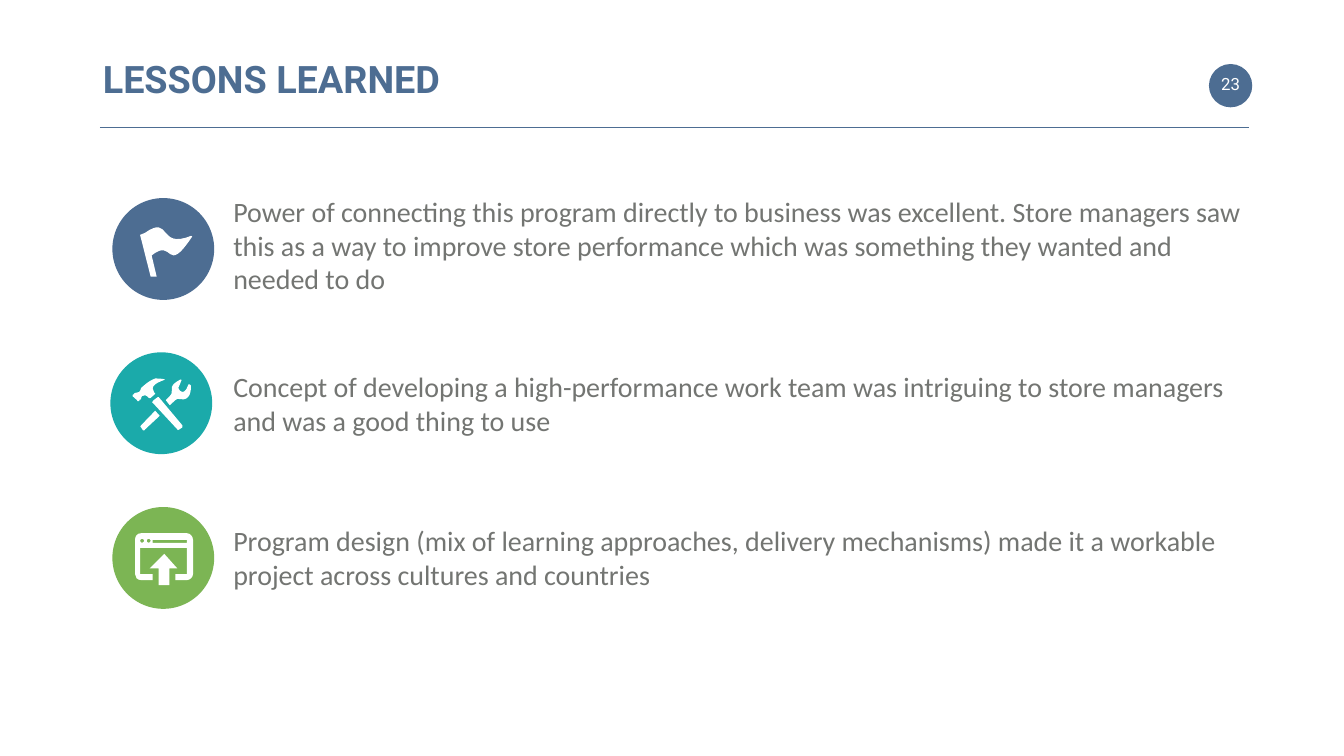
from lxml import etree
from pptx import Presentation
from pptx.dml.color import RGBColor
from pptx.enum.shapes import MSO_CONNECTOR, MSO_SHAPE
from pptx.enum.text import MSO_ANCHOR, MSO_AUTO_SIZE, PP_ALIGN
from pptx.oxml.ns import qn
from pptx.util import Inches, Pt

OVAL, LINE = MSO_SHAPE.OVAL, MSO_CONNECTOR.STRAIGHT
TOP, MIDDLE = MSO_ANCHOR.TOP, MSO_ANCHOR.MIDDLE
LEFT, CENTER = PP_ALIGN.LEFT, PP_ALIGN.CENTER
FIXED = MSO_AUTO_SIZE.NONE

COLORS = {"blue": "4D6D92", "teal": "1BAAAA", "green": "7CB554",
          "gray": "737572", "white": "FFFFFF"}
DISC = 2.02


def color(name):
    return RGBColor.from_string(COLORS[name])


def dot(x, y, r=0.04):
    h = r / 2
    return [(x, y + r), (x - h, y + r, x - r, y + h, x - r, y),
            (x - r, y - h, x - h, y - r, x, y - r),
            (x + h, y - r, x + r, y - h, x + r, y),
            (x + r, y + h, x + h, y + r, x, y + r)]


# Icon outlines, in inches from the corner of the disc.
# Two numbers are a corner; six are a Bezier curve from the last point.
FLAG = [
    [(1.56, 0.75), (0.9, 1.02, 1.17, 0.32, 0.65, 0.69), (0.55, 0.73),
     (0.76, 1.56), (0.88, 1.56), (0.78, 1.14),
     (1.23, 0.77, 1.05, 1.56, 1.58, 0.77),
     (1.6, 0.77, 1.58, 0.75, 1.56, 0.75)],
]
TOOLS = [
    # Hammer head
    [(0.63, 0.87), (0.67, 0.83, 0.71, 0.85, 0.77, 0.91), (0.79, 0.91),
     (0.81, 0.91, 0.87, 0.83, 0.89, 0.83), (0.89, 0.81),
     (0.87, 0.81, 0.86, 0.79, 0.86, 0.77),
     (0.75, 0.62, 1.14, 0.54, 1.08, 0.54),
     (1.04, 0.52, 0.92, 0.52, 0.89, 0.52),
     (0.83, 0.54, 0.73, 0.6, 0.69, 0.64),
     (0.63, 0.69, 0.61, 0.71, 0.61, 0.71),
     (0.59, 0.73, 0.61, 0.77, 0.57, 0.79),
     (0.53, 0.81, 0.51, 0.79, 0.48, 0.81),
     (0.48, 0.83, 0.46, 0.83, 0.44, 0.85), (0.44, 0.87), (0.53, 0.95),
     (0.53, 0.97, 0.54, 0.97, 0.57, 0.97),
     (0.57, 0.95, 0.59, 0.93, 0.61, 0.93),
     (0.61, 0.93, 0.61, 0.87, 0.63, 0.87)],
    # Hammer handle
    [(0.96, 0.89), (0.94, 0.89), (0.86, 0.95),
     (0.83, 0.97, 0.83, 0.97, 0.83, 0.99), (1.33, 1.53),
     (1.33, 1.55, 1.35, 1.55, 1.37, 1.53), (1.43, 1.49), (1.43, 1.45)],
    # Wrench head
    [(1.6, 0.66), (1.57, 0.62, 1.57, 0.64, 1.55, 0.64),
     (1.55, 0.66, 1.51, 0.71, 1.51, 0.73),
     (1.49, 0.77, 1.45, 0.81, 1.39, 0.77),
     (1.33, 0.71, 1.35, 0.69, 1.37, 0.66),
     (1.37, 0.64, 1.41, 0.58, 1.41, 0.56),
     (1.43, 0.56, 1.41, 0.54, 1.39, 0.54),
     (1.37, 0.56, 1.25, 0.6, 1.22, 0.69),
     (1.2, 0.75, 1.25, 0.81, 1.18, 0.87), (1.1, 0.95), (1.18, 1.05),
     (1.29, 0.95), (1.31, 0.93, 1.35, 0.91, 1.39, 0.93),
     (1.49, 0.95, 1.53, 0.91, 1.57, 0.85),
     (1.6, 0.79, 1.6, 0.69, 1.6, 0.66)],
    # Wrench handle
    [(0.61, 1.45), (0.59, 1.47, 0.59, 1.49, 0.61, 1.49), (0.65, 1.55),
     (0.67, 1.55, 0.69, 1.55, 0.69, 1.53), (0.98, 1.26), (0.89, 1.16)],
]
WINDOW = [
    # Frame
    [(1.48, 0.52), (0.57, 0.52), (0.49, 0.52, 0.45, 0.58, 0.45, 0.65),
     (0.45, 1.33), (0.45, 1.39, 0.49, 1.45, 0.57, 1.45), (0.8, 1.45),
     (0.8, 1.33), (0.55, 1.33), (0.55, 0.81), (1.48, 0.81), (1.48, 1.33),
     (1.25, 1.33), (1.25, 1.45), (1.48, 1.45),
     (1.54, 1.45, 1.6, 1.39, 1.6, 1.33), (1.6, 0.65),
     (1.6, 0.58, 1.54, 0.52, 1.48, 0.52)],
    # Buttons and address bar
    dot(0.59, 0.67),
    dot(0.72, 0.67),
    [(0.8, 0.71), (0.8, 0.65), (1.48, 0.65), (1.48, 0.71)],
    # Arrow
    [(1.03, 0.93), (0.74, 1.22), (0.92, 1.22), (0.92, 1.55), (1.13, 1.55),
     (1.13, 1.22), (1.29, 1.22)],
]

# Disc left and top, fill, icon, text top, width and height, wording
LESSONS = [
    (2.23, 3.93, "blue", FLAG, 3.76, 20.75, 2.22,
     "Power of connecting this program directly to business was excellent. "
     "Store managers saw this as a way to improve store performance which "
     "was something they wanted and needed to do"),
    (2.19, 6.99, "teal", TOOLS, 7.23, 20.08, 1.55,
     "Concept of developing a high-performance work team was intriguing to "
     "store managers and was a good thing to use"),
    (2.23, 10.06, "green", WINDOW, 10.29, 21.1, 1.55,
     "Program design (mix of learning approaches, delivery mechanisms) made "
     "it a workable project across cultures and countries"),
]


def paint(shape, fill):
    shape.shadow.inherit = False
    shape.fill.solid()
    shape.fill.fore_color.rgb = color(fill)
    shape.line.fill.background()


def place(shape, x, y, w, h):
    shape.left, shape.top = Inches(x), Inches(y)
    shape.width, shape.height = Inches(w), Inches(h)


def write(shape, text, size, font, ink, pad, anchor=TOP, align=LEFT, bold=False):
    frame = shape.text_frame
    frame.word_wrap = True
    frame.auto_size = FIXED
    frame.vertical_anchor = anchor
    frame.margin_left = frame.margin_right = Inches(pad)
    frame.margin_top = frame.margin_bottom = Inches(pad / 2)
    para = frame.paragraphs[0]
    para.text, para.alignment = text, align
    para.font.size, para.font.name, para.font.bold = Pt(size), font, bold
    para.font.color.rgb = color(ink)


def add_text(slide, x, y, w, h, *style, **more):
    box = slide.shapes.add_textbox(Inches(x), Inches(y), Inches(w), Inches(h))
    write(box, *style, **more)


def add_disc(slide, x, y, size, fill):
    disc = slide.shapes.add_shape(OVAL, Inches(x), Inches(y), Inches(size), Inches(size))
    paint(disc, fill)


def bend(step, points):
    """Turn a straight step of an outline into a Bezier curve."""
    step.tag = qn("a:cubicBezTo")
    for i, (px, py) in enumerate(points):
        spot = etree.Element(qn("a:pt"), x=str(px), y=str(py))
        step.insert(i, spot)


def add_icon(slide, x, y, icon):
    def spot(px, py):
        return Inches(x + px), Inches(y + py)

    pen = slide.shapes.build_freeform(*spot(*icon[0][0]))
    for i, outline in enumerate(icon):
        if i:
            pen.move_to(*spot(*outline[0]))
        pen.add_line_segments([spot(*part[-2:]) for part in outline[1:]])
    shape = pen.convert_to_shape()
    paint(shape, "white")
    # Bend the curved parts
    steps = list(shape._element.iter(qn("a:lnTo")))
    parts = [part for outline in icon for part in outline[1:]]
    for step, part in zip(steps, parts):
        if len(part) == 6:
            pulls = [spot(*part[:2]), spot(*part[2:4])]
            bend(step, [(px - shape.left, py - shape.top) for px, py in pulls])


def add_head(slide, x, y, w):
    # Page badge
    add_disc(slide, x + w - 1.19, y + 0.21, 0.86, "blue")
    add_text(slide, x + w - 1.27, y + 0.24, 1.02, 0.73, "23", 24, "Roboto",
             "white", 0.24, anchor=MIDDLE, align=CENTER)
    # Rule
    rule = slide.shapes.add_connector(LINE, Inches(x + 0.04), Inches(y + 1.47),
                                      Inches(x + w - 0.39), Inches(y + 1.47))
    rule.line.color.rgb = color("blue")
    rule.line.width = Pt(2.25)
    etree.SubElement(rule._element.spPr, qn("a:effectLst"))
    # Title
    title = slide.shapes.title
    place(title, x, y, w, 1.01)
    write(title, "LESSONS LEARNED", 54, "Roboto", "blue", 0.1, bold=True)


def add_lesson(slide, x, y, fill, icon, top, w, h, text):
    add_disc(slide, x, y, DISC, fill)
    add_icon(slide, x, y, icon)
    add_text(slide, 4.43, top, w, h, text, 40, "Calibri", "gray", 0.2)


def main():
    deck = Presentation()
    deck.slide_width, deck.slide_height = Inches(26.67), Inches(15)
    slide = deck.slides.add_slide(deck.slide_layouts[5])
    add_head(slide, 1.94, 1.06, 23.24)
    for lesson in LESSONS:
        add_lesson(slide, *lesson)
    deck.save("out.pptx")


if __name__ == "__main__":
    main()
